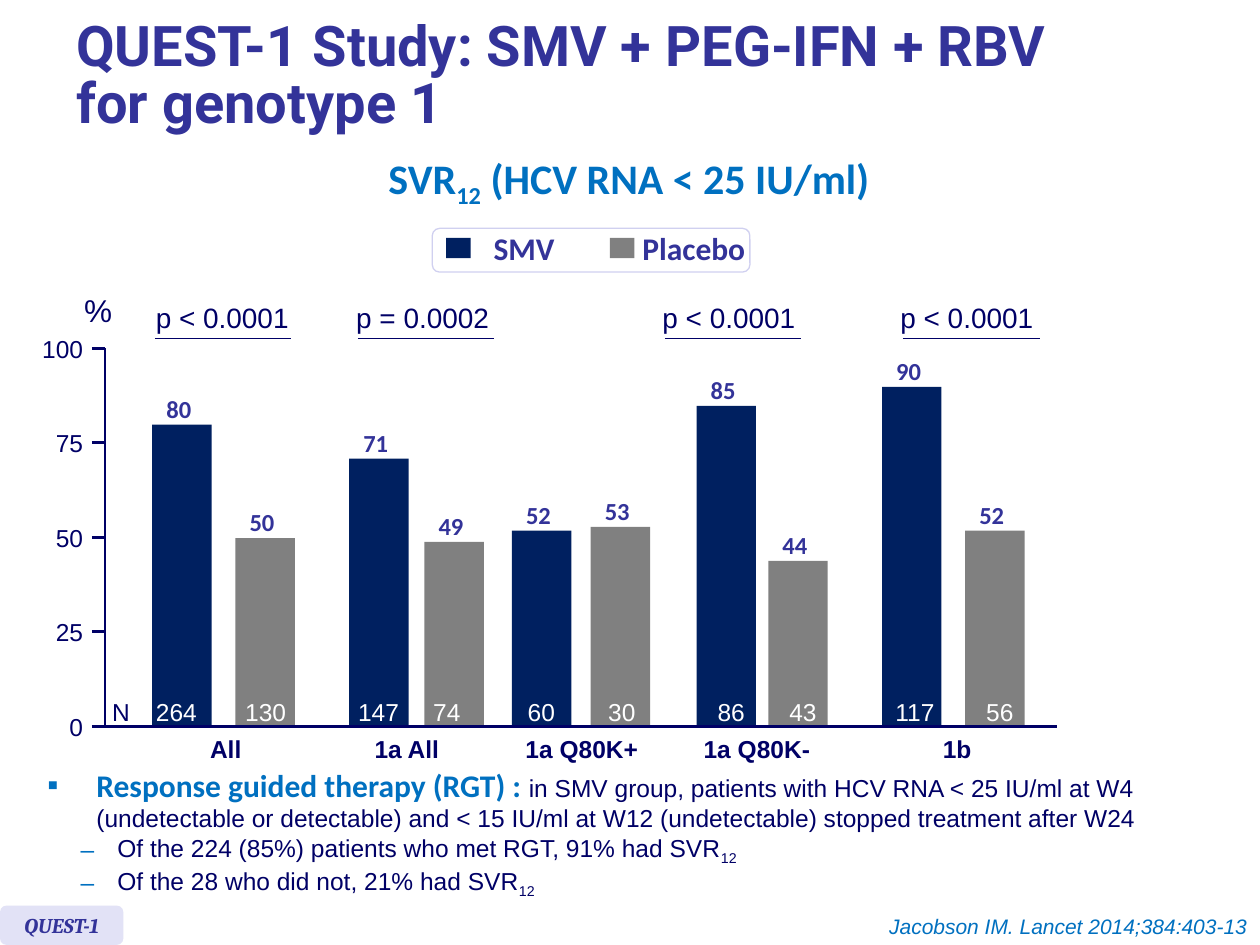
from pptx import Presentation
from pptx.dml.color import RGBColor
from pptx.enum.shapes import MSO_CONNECTOR, MSO_SHAPE
from pptx.enum.text import MSO_ANCHOR, MSO_AUTO_SIZE, PP_ALIGN
from pptx.oxml.ns import qn
from pptx.util import Pt
from lxml.etree import SubElement

COLORS = {
    "navy": "000066", "indigo": "333399", "blue": "0070C0", "smv": "002060",
    "placebo": "808080", "white": "FFFFFF", "lilac": "E2E2F6", "border": "D0D0F0",
}
ALIGN = {"left": PP_ALIGN.LEFT, "center": PP_ALIGN.CENTER, "right": PP_ALIGN.RIGHT}
BASE, PERCENT, BAR_WIDTH = 415.5, 2.16, 34
GROUPS = [
    ("All", 129, ("smv", 87, 80, "264", 82), ("placebo", 134.5, 50, "130", 133)),
    ("1a All", 232.5, ("smv", 199.5, 71, "147", 197.5), ("placebo", 242.5, 49, "74", 240.5)),
    ("1a Q80K+", 332.5, ("smv", 292.5, 52, "60", 294.5), ("placebo", 337.5, 53, "30", 340.5)),
    ("1a Q80K-", 432.5, ("smv", 398, 85, "86", 403), ("placebo", 439, 44, "43", 444)),
    ("1b", 547, ("smv", 504, 90, "117", 504.5), ("placebo", 551.5, 52, "56", 556.5)),
]
P_VALUES = [
    ("p < 0.0001", 82, 88.5), ("p = 0.0002", 196.5, 204.5),
    ("p < 0.0001", 371.5, 380), ("p < 0.0001", 507.5, 516),
]


def color(name):
    return RGBColor.from_string(COLORS[name])


def write(para, text, size=14, font="Arial", ink="navy", bold=False, italic=False, base=0):
    span = para.add_run()
    span.text = text
    span.font.size = Pt(size)
    span.font.name = font
    span.font.color.rgb = color(ink)
    span.font.bold = bold
    span.font.italic = italic
    if base:
        span.font._element.set("baseline", str(base * 1000))


class Painter:
    """Holds the current slide and draws each kind of element in its style."""

    def __init__(self, slide):
        self.slide = slide

    def box(self, left, top, width, height, inset=None, anchor=MSO_ANCHOR.TOP,
            wrap=False, grow=True):
        box = self.slide.shapes.add_textbox(Pt(left), Pt(top), Pt(width), Pt(height))
        frame = box.text_frame
        frame.word_wrap = wrap
        frame.auto_size = MSO_AUTO_SIZE.SHAPE_TO_FIT_TEXT if grow else MSO_AUTO_SIZE.NONE
        frame.vertical_anchor = anchor
        if inset is not None:
            frame.margin_left = frame.margin_right = Pt(inset)
            frame.margin_top = frame.margin_bottom = Pt(inset)
        return frame

    def label(self, text, left, top, width, height, align="left", inset=None,
              anchor=MSO_ANCHOR.TOP, **style):
        para = self.box(left, top, width, height, inset, anchor).paragraphs[0]
        para.alignment = ALIGN[align]
        write(para, text, **style)

    def block(self, left, top, width, height, fill, border=None, rounded=False):
        kind = MSO_SHAPE.ROUNDED_RECTANGLE if rounded else MSO_SHAPE.RECTANGLE
        block = self.slide.shapes.add_shape(kind, Pt(left), Pt(top), Pt(width), Pt(height))
        block.shadow.inherit = False
        block.fill.solid()
        block.fill.fore_color.rgb = color(fill)
        if border:
            block.line.color.rgb = color(border)
            block.line.width = Pt(0.75)
        else:
            block.line.fill.background()
        return block

    def line(self, left, top, right, bottom, width=1.5):
        line = self.slide.shapes.add_connector(
            MSO_CONNECTOR.STRAIGHT, Pt(left), Pt(top), Pt(right), Pt(bottom))
        line.line.color.rgb = color("navy")
        line.line.width = Pt(width)
        SubElement(line._element.spPr, qn("a:effectLst"))

    def bullet(self, para, mark, margin, indent):
        props = para._p.get_or_add_pPr()
        props.set("marL", str(Pt(margin)))
        props.set("indent", str(Pt(indent)))
        ink = SubElement(props, qn("a:buClr"))
        SubElement(ink, qn("a:srgbClr"), val=COLORS["blue"])
        SubElement(props, qn("a:buFont"), typeface="Arial")
        SubElement(props, qn("a:buChar"), char=mark)


def draw_heading(painter):
    para = painter.box(36.5, 6, 657, 77, anchor=MSO_ANCHOR.MIDDLE, wrap=True,
                       grow=False).paragraphs[0]
    para.line_spacing = 0.85
    style = dict(size=32, font="Roboto", ink="indigo", bold=True)
    write(para, "QUEST-1 Study: SMV + PEG-IFN + RBV", **style)
    para.add_line_break()
    write(para, "for genotype 1", **style)

    para = painter.box(206, 101, 307, 25, wrap=True).paragraphs[0]
    para.alignment = PP_ALIGN.CENTER
    para.line_spacing = Pt(15.2)
    for text, base in (("SVR", 0), ("12", -25), (" (HCV RNA < 25 IU/ml)", 0)):
        write(para, text, size=24, font="Calibri", ink="blue", bold=True, base=base)


def draw_legend(painter):
    painter.block(247, 130.5, 181.5, 25, "white", border="border", rounded=True)
    for text, fill, mark, left, width in (("SMV", "smv", 255, 275, 50),
                                          ("Placebo", "placebo", 348.5, 360, 74)):
        painter.block(mark, 136, 14, 11.5, fill)
        painter.label(text, left, 127.5, width, 29, size=18, font="Calibri",
                      ink="indigo", bold=True)


def draw_chart(painter):
    middle = MSO_ANCHOR.MIDDLE
    painter.label("%", 41, 163, 30, 29, size=18)
    for text, left, start in P_VALUES:
        painter.label(text, left, 168, 91.5, 26.5, size=16)
        painter.line(start, 193.5, start + 78, 193.5, width=0.75)
    for name, center, *bars in GROUPS:
        painter.label(name, center - 40, 416, 80, 24.5, align="center", bold=True)
        for fill, left, value, count, count_left in bars:
            top = BASE - value * PERCENT
            painter.block(left, top, BAR_WIDTH, BASE - top, fill)
            painter.label(str(value), left + 1, top - 25, 29, 31.5, inset=7.2,
                          anchor=middle, font="Calibri", ink="indigo", bold=True)
            painter.label(count, count_left, 394.5, 14.5 + 7.8 * len(count), 24.5,
                          anchor=middle, ink="white")
    painter.label("N", 57, 394.5, 24.5, 24.5, anchor=middle)
    for value in range(0, 101, 25):
        level = 415 - value * PERCENT
        painter.label(str(value), 23.5, level - 8.5, 24, 17, align="right",
                      inset=0, anchor=middle)
        painter.line(52.5, level, 604 if value == 0 else 60, level)
    painter.line(60, 199, 60, 415)


def draw_notes(painter):
    frame = painter.box(20, 434, 700, 80, wrap=True)
    para = frame.paragraphs[0]
    painter.bullet(para, "▪", 28, -28)
    write(para, "Response guided therapy (RGT) : ", size=18, font="Calibri",
          ink="blue", bold=True)
    write(para, "in SMV group, patients with HCV RNA < 25 IU/ml at W4 (undetectable or "
                "detectable) and < 15 IU/ml at W12 (undetectable) stopped treatment after W24")
    for text in ("Of the 224 (85%) patients who met RGT, 91% had SVR",
                 "Of the 28 who did not, 21% had SVR"):
        para = frame.add_paragraph()
        para.level = 1
        painter.bullet(para, "–", 40, -21)
        write(para, text)
        write(para, "12", base=-25)


def draw_footer(painter):
    frame = painter.block(0, 517.5, 70.5, 22.5, "lilac", rounded=True).text_frame
    frame.word_wrap = False
    frame.vertical_anchor = MSO_ANCHOR.MIDDLE
    para = frame.paragraphs[0]
    para.alignment = PP_ALIGN.CENTER
    write(para, "QUEST-1", size=12, font="Cambria", ink="indigo", bold=True, italic=True)
    painter.label("Jacobson IM. Lancet 2014;384:403-13", 499.5, 518.5, 220.5, 21.5,
                  align="right", size=12, ink="blue", italic=True)


def main():
    deck = Presentation()
    deck.slide_width, deck.slide_height = Pt(720), Pt(540)
    painter = Painter(deck.slides.add_slide(deck.slide_layouts[6]))
    for draw in (draw_heading, draw_legend, draw_chart, draw_notes, draw_footer):
        draw(painter)
    deck.save("out.pptx")


if __name__ == "__main__":
    main()
